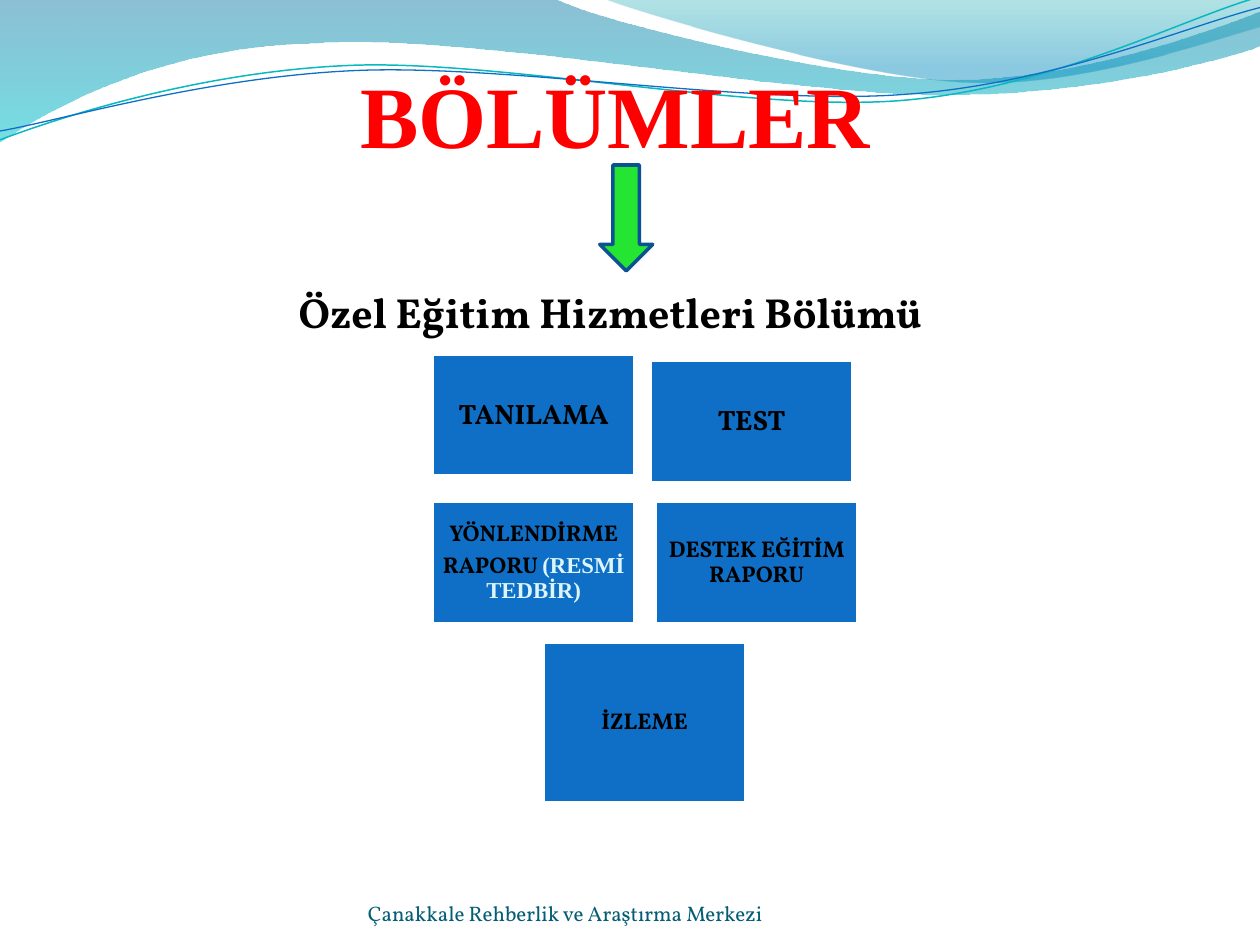
from lxml import etree
from pptx import Presentation, util as u
from pptx.dml.color import RGBColor
from pptx.enum import shapes as sh, text as tx
from pptx.oxml.ns import qn

HEX = {"red": "FF0000", "black": "000000", "white": "FFFFFF", "blue": "0F6FC6",
       "pale": "DBF5F9", "teal": "045D75", "green": "25E533", "navy": "0B5292",
       "aqua": "0AB8BF", "steel": "0074A1", "cyan": "00C6CF", "sea": "00A1A9",
       "sky": "008BBF"}
SERIF, BODY = "Times New Roman", "Vollkorn"

TITLE = "BÖLÜMLER"
HEAD = "Özel Eğitim Hizmetleri Bölümü"
FOOT = "Çanakkale Rehberlik ve Araştırma Merkezi"

# left, top, height, text size, inset, paragraphs of (text, font, colour) runs
WIDE = 1.61
BOXES = [
    (3.43, 2.81, 0.97, 16, 0.07, [[("TANILAMA", BODY, "black")]]),
    (5.16, 2.86, 0.97, 16, 0.07, [[("TEST", BODY, "black")]]),
    (3.43, 3.98, 0.97, 13, 0.05, [[("YÖNLENDİRME", BODY, "black")],
                                  [("RAPORU ", BODY, "black"),
                                   ("(RESMİ TEDBİR)", SERIF, "pale")]]),
    (5.2, 3.98, 0.97, 13, 0.05, [[("DESTEK EĞİTİM RAPORU", BODY, "black")]]),
    (4.31, 5.1, 1.27, 13, 0.05, [[("İZLEME", BODY, "black")]]),
]

# Each wave is a start point, then steps: 2 numbers a line, 6 a Bezier curve.
# Stops are (position, colour, opacity in percent).
BANDS = [
    ([(0, 0), (4.4, -0.01), (4.76, 0.17, 6.64, 0.63, 7.58, 0.63),
      (8.53, 0.63, 9.58, 0.26, 10, 0.09), (10.01, 0.36),
      (9.83, 0.44, 8.7, 0.76, 7.46, 0.75), (6.22, 0.75, 3.82, 0.28, 2.57, 0.34),
      (1.29, 0.36, 0.46, 0.83, -0.01, 1.13)],
     [(0, "steel", 45), (1, "cyan", 55)]),
    ([(4.79, -0.01), (5.09, 0.11, 6.82, 0.62, 7.69, 0.65),
      (8.56, 0.69, 9.61, 0.32, 10, 0.21), (10, 0)],
     [(0, "sea", 30), (0.8, "sky", 45)]),
]
LINES = [
    ([(0, 1.11), (0.48, 0.93, 1.58, 0.57, 2.77, 0.52),
      (3.95, 0.47, 5.93, 0.89, 7.13, 0.8), (8.33, 0.71, 9.38, 0.15, 9.98, -0.02)],
     "aqua", 0.85),
    ([(0, 1.04), (0.47, 0.96, 1.64, 0.61, 2.83, 0.56),
      (4.03, 0.51, 5.97, 0.84, 7.17, 0.75), (8.36, 0.67, 9.41, 0.21, 10, 0.06)],
     "blue", 0.75),
]


def rgb(name):
    return RGBColor.from_string(HEX[name])


def wave(slide, steps, close):
    """Draw the end points as a freeform, then bend its lines into curves."""
    ends = [tuple(map(u.Inches, step[-2:])) for step in steps]
    form = slide.shapes.build_freeform(*ends[0])
    form.add_line_segments(ends[1:], close=close)
    shape = form.convert_to_shape()
    shape.shadow.inherit = False
    parts = list(shape.element.iter(qn("a:lnTo")))
    for part, step in zip(parts, steps[1:]):
        if len(step) == 2:
            continue
        part.tag = qn("a:cubicBezTo")
        for i in (0, 2):
            spot = etree.Element(qn("a:pt"))
            spot.set("x", str(u.Inches(step[i]) - shape.left))
            spot.set("y", str(u.Inches(step[i + 1]) - shape.top))
            part.insert(i // 2, spot)
    return shape


def shade(shape, stops):
    """Fill from top to bottom with see-through colours."""
    shape.fill.gradient()
    shape.fill.gradient_angle = 270
    for stop, (pos, name, alpha) in zip(shape.fill.gradient_stops, stops):
        stop.position = pos
        stop.color.rgb = rgb(name)
    tags = shape.element.iter(qn("a:srgbClr"))
    for tag, (pos, name, alpha) in zip(tags, stops):
        etree.SubElement(tag, qn("a:alpha")).set("val", str(alpha * 1000))


def place(shape, left, top, wide, high):
    shape.left, shape.top = u.Inches(left), u.Inches(top)
    shape.width, shape.height = u.Inches(wide), u.Inches(high)


def write(shape, paras, size, bold, align, anchor, pad):
    """Set paragraphs of (text, font, colour) runs; pad is left/right, top/bottom."""
    frame = shape.text_frame
    frame.word_wrap = True
    frame.auto_size = tx.MSO_AUTO_SIZE.NONE
    frame.vertical_anchor = anchor
    frame.margin_left = frame.margin_right = u.Inches(pad[0])
    frame.margin_top = frame.margin_bottom = u.Inches(pad[1])
    for i, runs in enumerate(paras):
        para = frame.add_paragraph() if i else frame.paragraphs[0]
        para.alignment = align
        for words, face, tint in runs:
            run = para.add_run()
            run.text = words
            run.font.name, run.font.size = face, u.Pt(size)
            run.font.bold, run.font.color.rgb = bold, rgb(tint)


def block(slide, kind, spot, fill, edge):
    shape = slide.shapes.add_shape(kind, *map(u.Inches, spot))
    shape.shadow.inherit = False
    shape.fill.solid()
    shape.fill.fore_color.rgb = rgb(fill)
    shape.line.color.rgb = rgb(edge)
    shape.line.width = u.Pt(2)
    return shape


def main():
    deck = Presentation()
    deck.slide_width, deck.slide_height = u.Inches(10), u.Inches(7.5)
    slide = deck.slides.add_slide(deck.slide_layouts[2])
    left, mid = tx.PP_ALIGN.LEFT, tx.PP_ALIGN.CENTER
    low, half = tx.MSO_ANCHOR.BOTTOM, tx.MSO_ANCHOR.MIDDLE

    for steps, stops in BANDS:
        band = wave(slide, steps, True)
        band.line.fill.background()
        shade(band, stops)
    for steps, tint, thick in LINES:
        line = wave(slide, steps, False)
        line.fill.background()
        line.line.color.rgb = rgb(tint)
        line.line.width = u.Pt(thick)

    title, head = slide.shapes.title, slide.placeholders[1]
    for item in (title, head):  # bring in front of the waves
        item.element.getparent().append(item.element)
    place(title, 0.2, 0.13, 9.37, 1.19)
    write(title, [[(TITLE, SERIF, "red")]], 50, True, mid, low, (0, 0))
    place(head, 2.32, 2.02, 5.75, 0.91)
    write(head, [[(HEAD, BODY, "black")]], 24, True, left, half, (0.05, 0))

    for x, y, high, size, pad, paras in BOXES:
        box = block(slide, sh.MSO_SHAPE.RECTANGLE, (x, y, WIDE, high), "blue", "white")
        write(box, paras, size, True, mid, half, (pad, pad))
        for para in box.text_frame.paragraphs:
            para.line_spacing, para.space_after = 0.9, u.Pt(size * 0.35)

    foot = slide.shapes.add_textbox(*map(u.Inches, (2.92, 6.95, 3.67, 0.4)))
    write(foot, [[(FOOT, BODY, "teal")]], 12, False, left, low, (0, 0))
    block(slide, sh.MSO_SHAPE.DOWN_ARROW, (4.76, 1.31, 0.42, 0.84), "green", "navy")
    deck.save("out.pptx")


if __name__ == "__main__":
    main()
